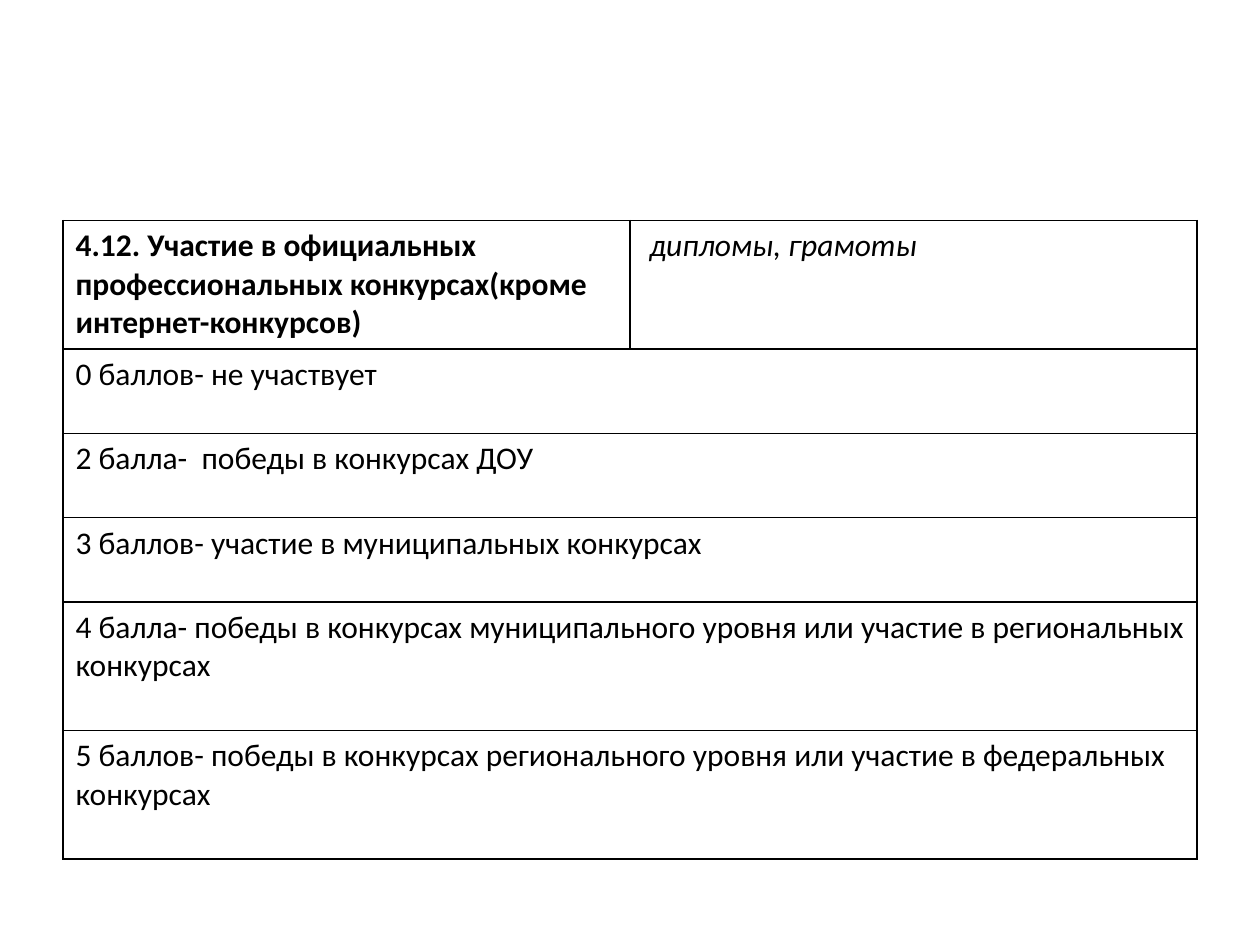
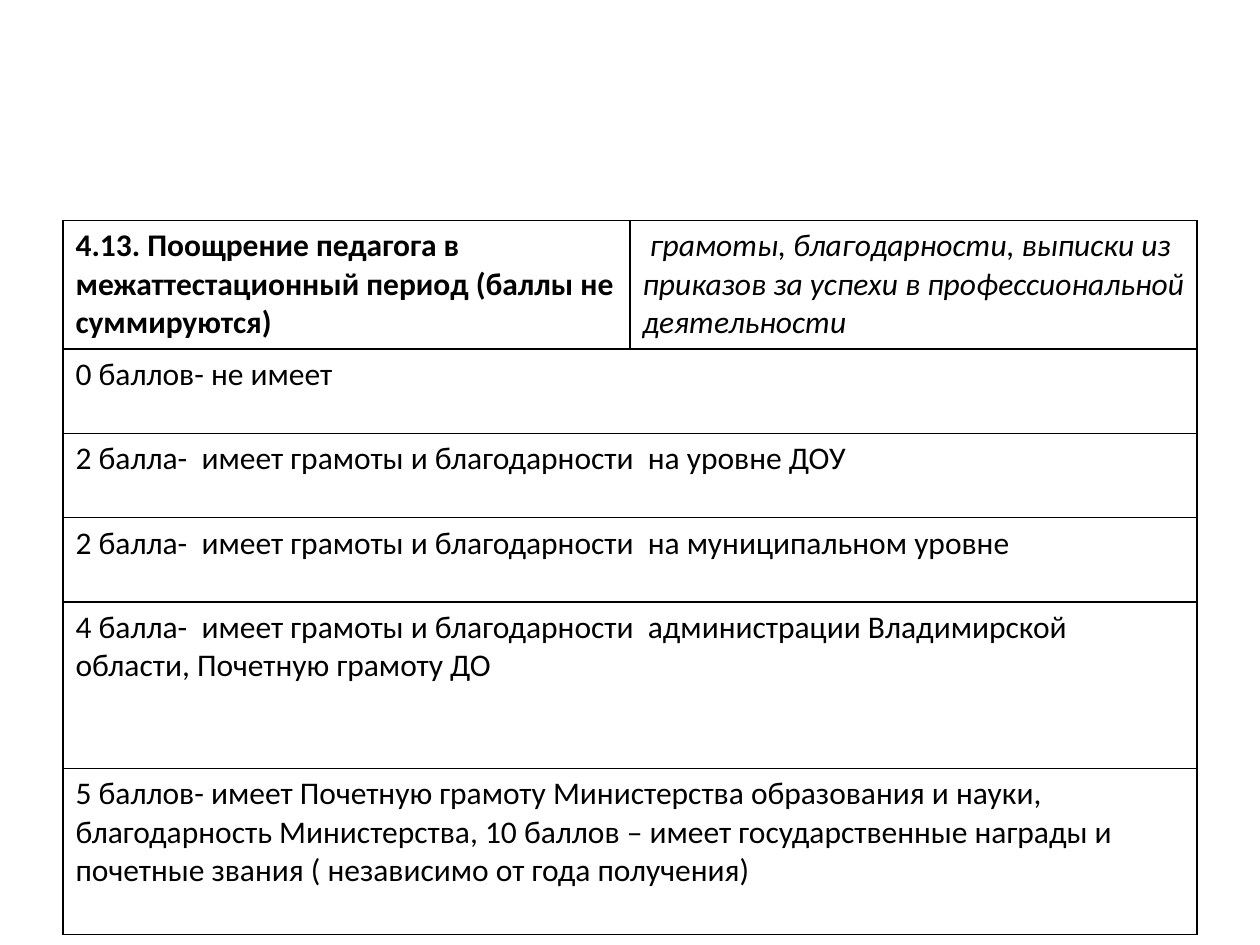
from dataclasses import dataclass

from lxml import etree
from pptx import Presentation
from pptx.dml.color import RGBColor
from pptx.oxml import ns
from pptx.util import Inches, Pt


@dataclass(frozen=True)
class Theme:
    font: str = "Calibri"
    size: int = 18
    ink: str = "000000"
    border: float = 1


@dataclass(frozen=True)
class Criterion:
    title: str
    evidence: str
    scores: tuple[str, ...]
    last_rows_height: float


THEME = Theme()
LEFT, TOP, COLUMN_WIDTH = 0.5, 1.75, 4.5
HEADER_HEIGHT, SCORE_HEIGHT = 1.02, 0.67
TALL_ROWS = 2

CRITERIA = (
    Criterion(
        "4.12. Участие в официальных профессиональных конкурсах(кроме интернет-конкурсов)",
        " дипломы, грамоты",
        (
            "0 баллов- не участвует",
            "2 балла-  победы в конкурсах ДОУ",
            "3 баллов- участие в муниципальных конкурсах",
            "4 балла- победы в конкурсах муниципального уровня или участие в региональных конкурсах",
            "5 баллов- победы в конкурсах регионального уровня или участие в федеральных конкурсах",
        ),
        1.02,
    ),
    Criterion(
        "4.13. Поощрение педагога в межаттестационный период (баллы не суммируются)",
        " грамоты, благодарности, выписки из приказов за успехи в профессиональной деятельности",
        (
            "0 баллов- не имеет",
            "2 балла-  имеет грамоты и благодарности  на уровне ДОУ",
            "2 балла-  имеет грамоты и благодарности  на муниципальном уровне",
            "4 балла-  имеет грамоты и благодарности  администрации Владимирской области, "
            "Почетную грамоту ДО",
            "5 баллов- имеет Почетную грамоту Министерства образования и науки, "
            "благодарность Министерства, 10 баллов – имеет государственные награды "
            "и почетные звания ( независимо от года получения)",
        ),
        1.32,
    ),
)


def outline(cell) -> None:
    properties = cell._tc.get_or_add_tcPr()
    for side in ("a:lnL", "a:lnR", "a:lnT", "a:lnB"):
        line = etree.SubElement(properties, ns.qn(side), w=str(Pt(THEME.border)))
        fill = etree.SubElement(line, ns.qn("a:solidFill"))
        etree.SubElement(fill, ns.qn("a:srgbClr"), val=THEME.ink)
    cell.fill.background()


def write(cell, words: str, bold: bool = False, italic: bool = False) -> None:
    run = cell.text_frame.paragraphs[0].add_run()
    run.text = words
    run.font.name = THEME.font
    run.font.size = Pt(THEME.size)
    run.font.color.rgb = RGBColor.from_string(THEME.ink)
    run.font.bold = bold
    run.font.italic = italic


def add_criterion(slide, criterion: Criterion) -> None:
    short_rows = len(criterion.scores) - TALL_ROWS
    heights = (
        [HEADER_HEIGHT]
        + [SCORE_HEIGHT] * short_rows
        + [criterion.last_rows_height] * TALL_ROWS
    )
    table = slide.shapes.add_table(
        len(heights), 2, Inches(LEFT), Inches(TOP),
        Inches(2 * COLUMN_WIDTH), Inches(sum(heights)),
    ).table
    table.first_row = False
    table.horz_banding = False
    for row, height in zip(table.rows, heights):
        row.height = Inches(height)
    for cell in table.iter_cells():
        outline(cell)
    write(table.cell(0, 0), criterion.title, bold=True)
    write(table.cell(0, 1), criterion.evidence, italic=True)
    for index, score in enumerate(criterion.scores, start=1):
        table.cell(index, 0).merge(table.cell(index, 1))
        write(table.cell(index, 0), score)


def main() -> None:
    deck = Presentation()
    deck.slide_width = Inches(10)
    deck.slide_height = Inches(7.5)
    for criterion in CRITERIA:
        add_criterion(deck.slides.add_slide(deck.slide_layouts[6]), criterion)
    deck.save("out.pptx")


if __name__ == "__main__":
    main()
